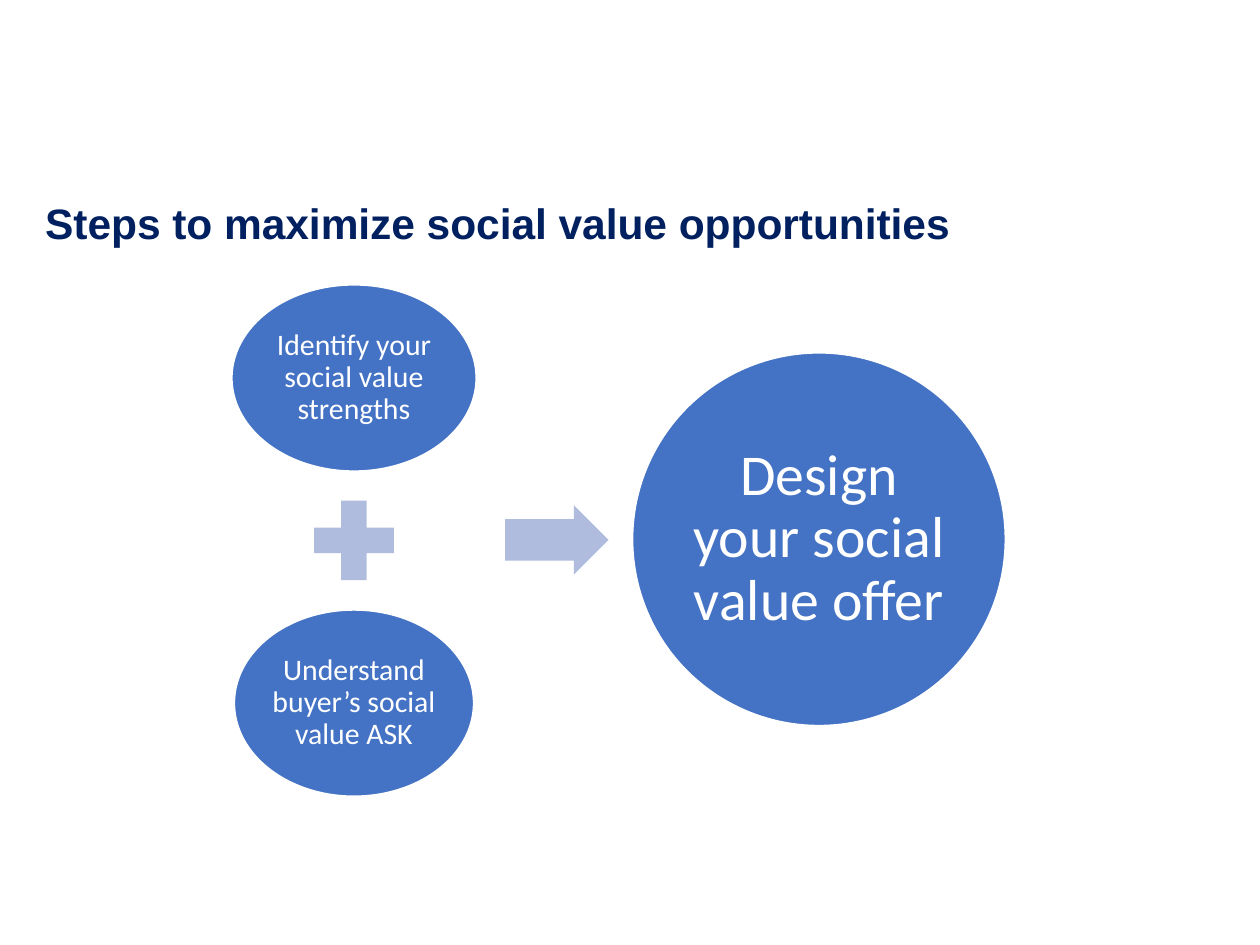
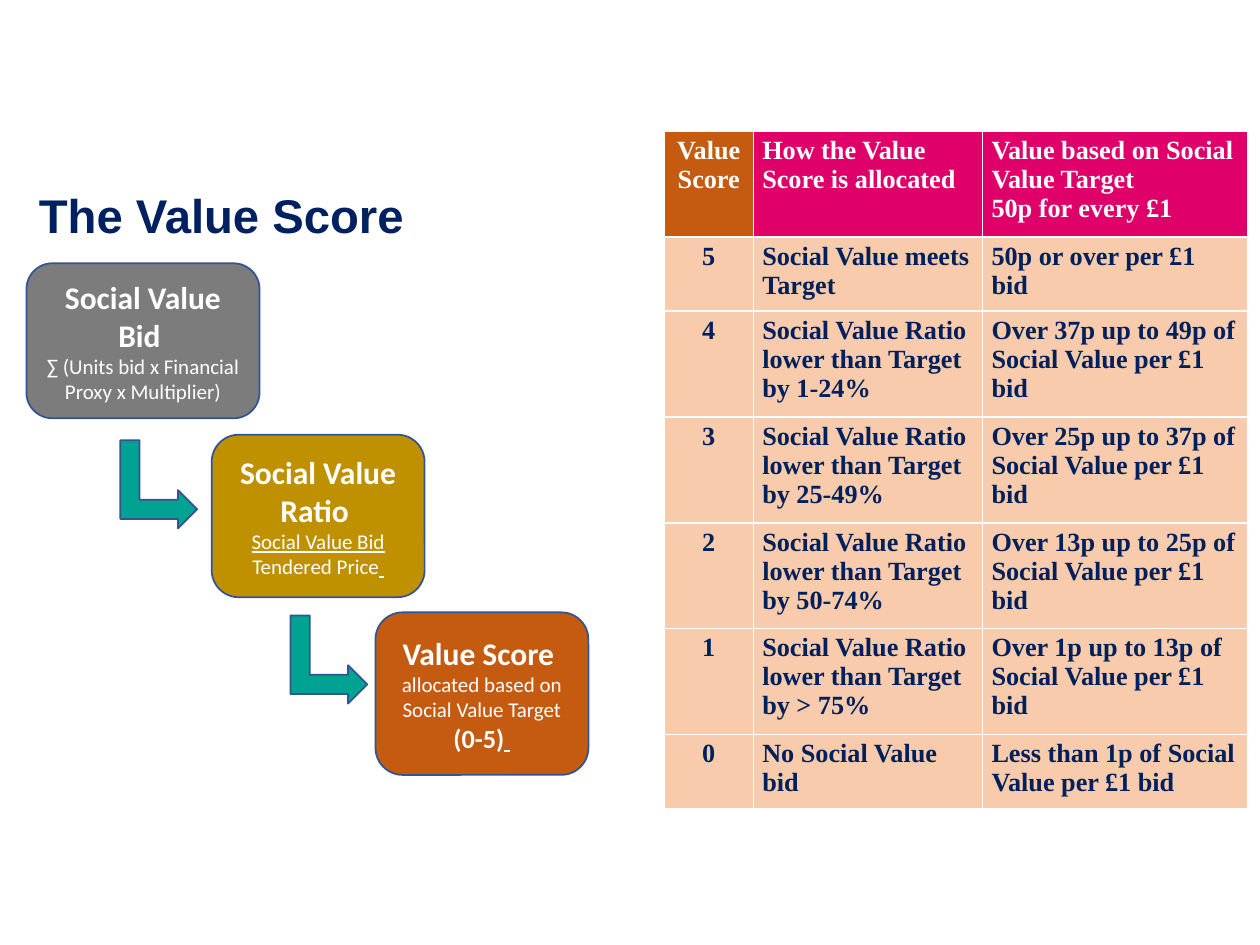
from pptx import Presentation
from pptx.dml.color import RGBColor
from pptx.enum.shapes import MSO_SHAPE
from pptx.enum.text import MSO_ANCHOR, PP_ALIGN
from pptx.util import Inches, Pt

NAVY = RGBColor(0x00, 0x20, 0x60)
TABLE_NAVY = RGBColor(0x00, 0x20, 0x5B)
WHITE = RGBColor(0xFF, 0xFF, 0xFF)
BLUE = RGBColor(0x44, 0x72, 0xC4)
PALE_BLUE = RGBColor(0xB0, 0xBC, 0xDE)
OUTLINE = RGBColor(0x32, 0x54, 0x91)
GREY = RGBColor(0x7C, 0x7C, 0x7C)
GOLD = RGBColor(0xBF, 0x90, 0x00)
ORANGE = RGBColor(0xC5, 0x5A, 0x11)
PEACH = RGBColor(0xF8, 0xCB, 0xAD)
PINK = RGBColor(0xE0, 0x00, 0x69)
TEAL = RGBColor(0x00, 0xA2, 0x91)

ELLIPSE = MSO_SHAPE.OVAL
PLUS = MSO_SHAPE.MATH_PLUS
RIGHT_ARROW = MSO_SHAPE.RIGHT_ARROW
ROUND_RECT = MSO_SHAPE.ROUNDED_RECTANGLE
BENT_ARROW = MSO_SHAPE.BENT_UP_ARROW
CENTER, LEFT = PP_ALIGN.CENTER, PP_ALIGN.LEFT
MIDDLE, TOP = MSO_ANCHOR.MIDDLE, MSO_ANCHOR.TOP

# Each card paragraph is a list of runs: text, size, bold, underline
CARDS = [
    ((0.21, 2.09, 1.85, 1.23), GREY, [
        [("Social Value Bid ", 18, True, False)],
        [("∑ (Units bid x Financial Proxy x Multiplier)", 12, False, False)]]),
    ((1.68, 3.45, 1.69, 1.29), GOLD, [
        [("Social Value Ratio ", 18, True, False)],
        [("Social Value Bid", 12, False, True)],
        [("Tendered Price", 12, False, False), (" ", 12, False, True)]]),
    ((2.98, 4.86, 1.69, 1.29), ORANGE, [
        [("Value Score ", 18, True, False)],
        [("allocated based on Social Value Target ", 12, False, False),
         ("(0-5)", 15, True, False), (" ", 15, True, True)]]),
]
STEP_ARROWS = [(0.91, 3.54), (2.26, 4.93)]

HEADER = ["Value Score", "How the Value Score is allocated",
          "Value based on Social Value Target\n50p for every £1"]
SCORES = [
    ("5", "Social Value meets Target", "50p or over per £1 bid"),
    ("4", "Social Value Ratio lower than Target by 1-24%",
     "Over 37p up to 49p of Social Value per £1 bid"),
    ("3", "Social Value Ratio lower than Target by 25-49%",
     "Over 25p up to 37p of Social Value per £1 bid"),
    ("2", "Social Value Ratio lower than Target by 50-74%",
     "Over 13p up to 25p of Social Value per £1 bid"),
    ("1", "Social Value Ratio lower than Target by > 75%",
     "Over 1p up to 13p of Social Value per £1 bid"),
    ("0", "No Social Value bid", "Less than 1p of Social Value per £1 bid"),
]
COLUMN_WIDTHS = [0.71, 1.82, 2.1]
ROW_HEIGHTS = [0.84, 0.59, 0.84, 0.84, 0.84, 0.84, 0.59]


def add_run(p, text, size, font="Calibri", color=WHITE, bold=False, underline=False):
    r = p.add_run()
    r.text = text
    r.font.name, r.font.size = font, Pt(size)
    r.font.bold, r.font.underline = bold, underline
    r.font.color.rgb = color


def add_shape(s, kind, box, fill, line=None):
    sp = s.shapes.add_shape(kind, *map(Inches, box))
    sp.shadow.inherit = False
    sp.fill.solid()
    sp.fill.fore_color.rgb = fill
    if line is None:
        sp.line.fill.background()
    else:
        sp.line.color.rgb = line
        sp.line.width = Pt(1)
    return sp


def add_title(s, left, top, text, size):
    tf = s.shapes.add_textbox(*map(Inches, (left, top, 9.48, 0.59))).text_frame
    tf.word_wrap = True
    tf.vertical_anchor = TOP
    p = tf.paragraphs[0]
    p.line_spacing = 0.9
    add_run(p, text, size, "Arial", NAVY, bold=True)


def add_bubble(s, box, text, size, inset):
    sp = add_shape(s, ELLIPSE, box, BLUE, WHITE)
    tf = sp.text_frame
    tf.word_wrap = True
    tf.vertical_anchor = MIDDLE
    tf.margin_left = tf.margin_right = Inches(inset)
    tf.margin_top = tf.margin_bottom = Inches(inset)
    p = tf.paragraphs[0]
    p.alignment = CENTER
    p.line_spacing = 0.9
    add_run(p, text, size)


def add_equation(s, left, top):
    """Two inputs added together, leading to the offer."""
    add_bubble(s, (left, top, 1.94, 1.48), "Identify your social value strengths", 17, 0.02)
    add_shape(s, PLUS, (left + 0.54, top + 1.6, 0.86, 0.86), PALE_BLUE)
    add_bubble(s, (left + 0.02, top + 2.58, 1.9, 1.48),
               "Understand buyer’s social value ASK", 17, 0.02)
    arrow = add_shape(s, RIGHT_ARROW, (left + 2.17, top + 1.75, 0.82, 0.55), PALE_BLUE)
    arrow.adjustments[0] = 0.6
    add_bubble(s, (left + 3.18, top + 0.54, 2.96, 2.96),
               "Design your social value offer", 33, 0.05)


def add_card(s, box, fill, paragraphs):
    tf = add_shape(s, ROUND_RECT, box, fill, OUTLINE).text_frame
    tf.word_wrap = True
    tf.vertical_anchor = MIDDLE
    for i, runs in enumerate(paragraphs):
        p = tf.add_paragraph() if i else tf.paragraphs[0]
        p.alignment = CENTER
        for text, size, bold, underline in runs:
            add_run(p, text, size, bold=bold, underline=underline)


def fill_cell(cell, text, fill, color, align):
    cell.fill.solid()
    cell.fill.fore_color.rgb = fill
    cell.margin_left = cell.margin_right = Inches(0.07)
    cell.margin_top = cell.margin_bottom = Inches(0.04)
    for i, line in enumerate(text.split("\n")):
        p = cell.text_frame.add_paragraph() if i else cell.text_frame.paragraphs[0]
        p.alignment = align
        add_run(p, line, 15, "Times New Roman", color, bold=True)


def add_score_table(s, left, top):
    rows = [HEADER, *SCORES]
    table = s.shapes.add_table(
        len(rows), len(HEADER), Inches(left), Inches(top),
        Inches(sum(COLUMN_WIDTHS)), Inches(sum(ROW_HEIGHTS))).table
    for column, width in zip(table.columns, COLUMN_WIDTHS):
        column.width = Inches(width)
    for row, height in zip(table.rows, ROW_HEIGHTS):
        row.height = Inches(height)
    for i, texts in enumerate(rows):
        for j, text in enumerate(texts):
            header_fill = PINK if j else ORANGE
            fill, color = (PEACH, TABLE_NAVY) if i else (header_fill, WHITE)
            fill_cell(table.cell(i, j), text, fill, color, LEFT if j else CENTER)


def build_steps_slide(s):
    add_title(s, 0.26, 1.56, "Steps to maximize social value opportunities", 24.3)
    add_equation(s, 1.84, 2.26)


def build_score_slide(s):
    add_title(s, 0.21, 1.48, "The Value Score", 27)
    for box, fill, paragraphs in CARDS:
        add_card(s, box, fill, paragraphs)
    add_score_table(s, 5.27, 1.04)
    for left, top in STEP_ARROWS:
        add_shape(s, BENT_ARROW, (left, top, 0.7, 0.61), TEAL, OUTLINE).rotation = 90


def main():
    prs = Presentation()
    prs.slide_width, prs.slide_height = Inches(10), Inches(7.5)
    blank = prs.slide_layouts[6]
    for build in (build_steps_slide, build_score_slide):
        build(prs.slides.add_slide(blank))
    prs.save("out.pptx")


if __name__ == "__main__":
    main()
